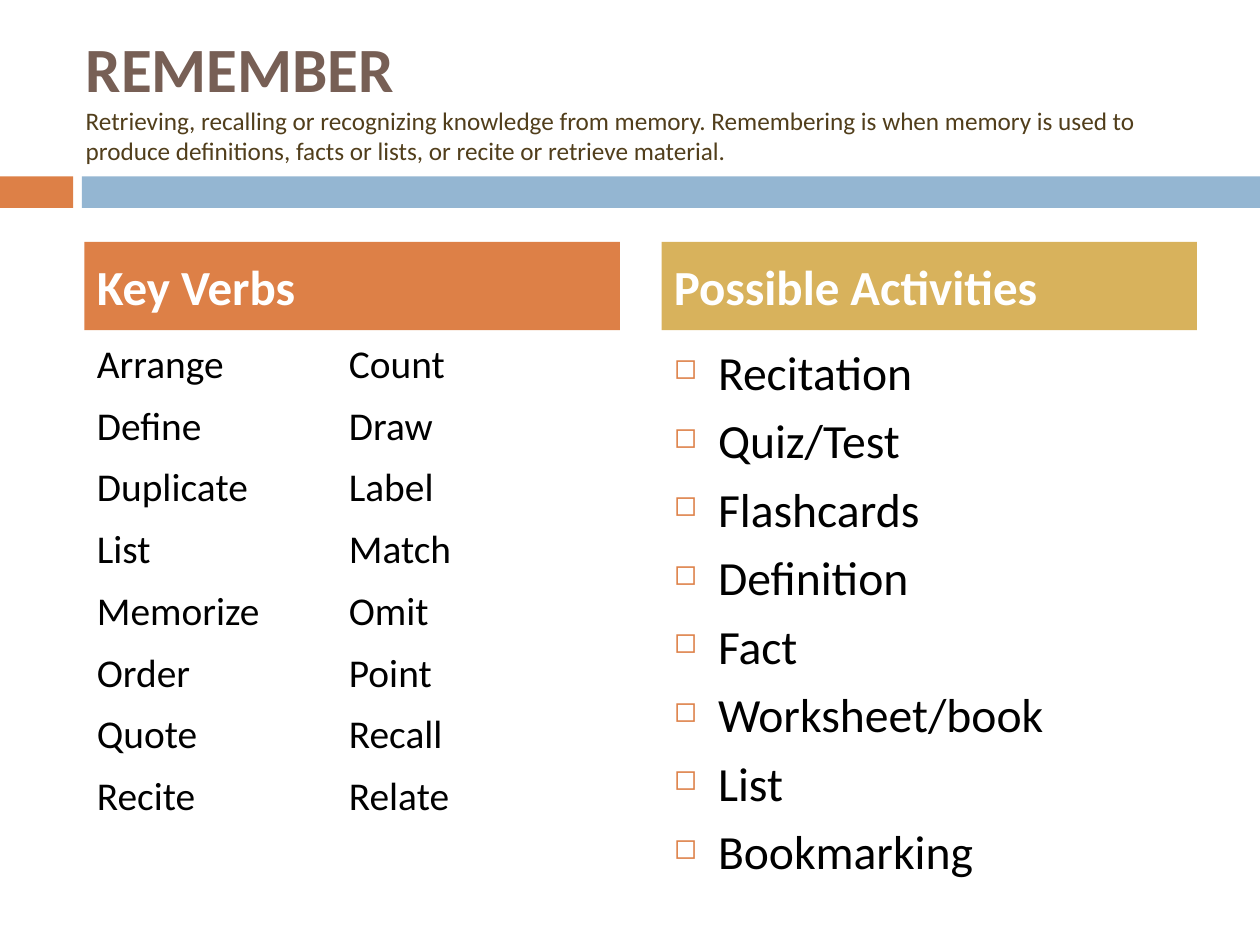
from typing import NamedTuple

from lxml.etree import SubElement
from pptx import Presentation
from pptx.dml.color import RGBColor
from pptx.enum.shapes import MSO_SHAPE as Preset
from pptx.enum.text import MSO_ANCHOR as Anchor, MSO_AUTO_SIZE as AutoSize, PP_ALIGN as Align
from pptx.oxml.ns import qn
from pptx.util import Inches, Pt

ORANGE = RGBColor(0xDD, 0x80, 0x47)
BLUE = RGBColor(0x94, 0xB6, 0xD2)
GOLD = RGBColor(0xD8, 0xB2, 0x5C)
BROWN = RGBColor(0x77, 0x5F, 0x55)
DARK_BROWN = RGBColor(0x51, 0x3E, 0x1B)
BLACK = RGBColor(0, 0, 0)
WHITE = RGBColor(255, 255, 255)

FONT = "Calibri"
COLUMN_WIDTH = 4.25
HEADING_TOP, HEADING_HEIGHT = 1.92, 0.7
LIST_TOP, LIST_HEIGHT = 2.67, 3.92
VERB_TAB = 2
BULLET_INDENT = 0.35

DEFINITION = (
    "Retrieving, recalling or recognizing knowledge from memory. "
    "Remembering is when memory is used to produce definitions, "
    "facts or lists, or recite or retrieve material."
)
VERB_PAIRS = [
    ("Arrange", "Count"),
    ("Define", "Draw"),
    ("Duplicate", "Label"),
    ("List", "Match"),
    ("Memorize", "Omit"),
    ("Order", "Point"),
    ("Quote", "Recall"),
    ("Recite", "Relate"),
]
ACTIVITIES = [
    "Recitation", "Quiz/Test", "Flashcards", "Definition",
    "Fact", "Worksheet/book", "List", "Bookmarking",
]


class Box(NamedTuple):
    left: float
    top: float
    width: float
    height: float

    def lengths(self) -> list:
        return [Inches(value) for value in self]


class Column(NamedTuple):
    left: float
    heading: str
    fill: RGBColor
    lines: list
    size: float
    bulleted: bool


COLUMNS = [
    Column(0.67, "Key Verbs", ORANGE, ["\t".join(pair) for pair in VERB_PAIRS], 22.5, False),
    Column(5.25, "Possible Activities", GOLD, ACTIVITIES, 27.2, True),
]


def format_paragraph(paragraph, size: float, color: RGBColor, bold: bool = False) -> None:
    paragraph.alignment = Align.LEFT
    for run in paragraph.runs:
        run.font.name = FONT
        run.font.size = Pt(size)
        run.font.bold = bold
        run.font.color.rgb = color


def add_block(slide, box: Box, fill: RGBColor):
    block = slide.shapes.add_shape(Preset.RECTANGLE, *box.lengths())
    block.shadow.inherit = False
    block.fill.solid()
    block.fill.fore_color.rgb = fill
    block.line.fill.background()
    return block


def add_bullet(paragraph) -> None:
    properties = paragraph._p.get_or_add_pPr()
    properties.set("marL", str(Inches(BULLET_INDENT)))
    properties.set("indent", str(-Inches(BULLET_INDENT)))
    color = SubElement(properties, qn("a:buClr"))
    SubElement(color, qn("a:srgbClr"), val=str(ORANGE))
    SubElement(properties, qn("a:buSzPct"), val="60000")
    SubElement(properties, qn("a:buChar"), char="◻")


def add_tab_stop(paragraph) -> None:
    tabs = SubElement(paragraph._p.get_or_add_pPr(), qn("a:tabLst"))
    SubElement(tabs, qn("a:tab"), pos=str(Inches(VERB_TAB)), algn="l")


def add_title(slide) -> None:
    title = slide.shapes.title
    title.left, title.top, title.width, title.height = Box(0.58, 0.3, 8.92, 0.95).lengths()
    frame = title.text_frame
    frame.text = f"REMEMBER\n{DEFINITION}"
    frame.auto_size = AutoSize.NONE
    frame.vertical_anchor = Anchor.MIDDLE
    name, definition = frame.paragraphs
    format_paragraph(name, 36, BROWN, bold=True)
    format_paragraph(definition, 14.4, DARK_BROWN)


def add_column(slide, column: Column) -> None:
    heading = add_block(
        slide, Box(column.left, HEADING_TOP, COLUMN_WIDTH, HEADING_HEIGHT), column.fill
    )
    heading.text_frame.text = column.heading
    heading.text_frame.vertical_anchor = Anchor.MIDDLE
    heading_line = heading.text_frame.paragraphs[0]
    heading_line.space_before = Pt(7)
    format_paragraph(heading_line, 28, WHITE, bold=True)

    entries = slide.shapes.add_textbox(
        *Box(column.left, LIST_TOP, COLUMN_WIDTH, LIST_HEIGHT).lengths()
    )
    entries.text_frame.word_wrap = True
    entries.text_frame.text = "\n".join(column.lines)
    for paragraph in entries.text_frame.paragraphs:
        format_paragraph(paragraph, column.size, BLACK)
        if column.bulleted:
            paragraph.space_before = Pt(6.5)
            add_bullet(paragraph)
        else:
            paragraph.line_spacing = 0.95
            paragraph.space_after = Pt(9.6)
            add_tab_stop(paragraph)


def main() -> None:
    deck = Presentation()
    deck.slide_width, deck.slide_height = Inches(10), Inches(7.5)
    slide = deck.slides.add_slide(deck.slide_layouts.get_by_name("Title Only"))
    add_block(slide, Box(0, 1.4, 0.58, 0.25), ORANGE)
    add_block(slide, Box(0.65, 1.4, 9.35, 0.25), BLUE)
    add_title(slide)
    for column in COLUMNS:
        add_column(slide, column)
    deck.save("out.pptx")


if __name__ == "__main__":
    main()
